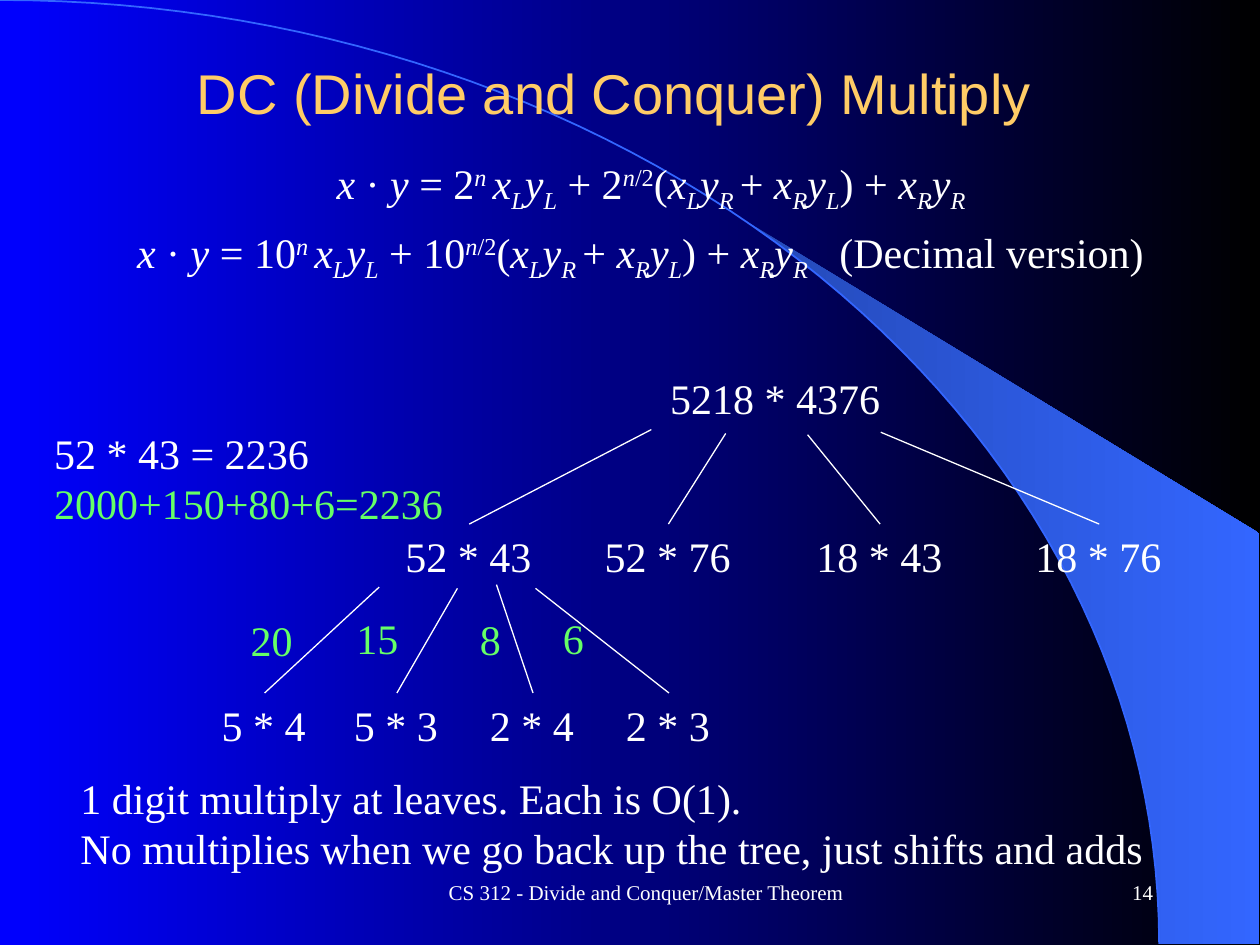
import math

from lxml import etree
from pptx import Presentation
from pptx.dml.color import RGBColor
from pptx.enum import shapes, text
from pptx.oxml import ns
from pptx.util import Pt

WHITE, GREEN, GOLD = "FFFFFF", "66FF66", "FFCC66"
BLUE, DARK_BLUE = "3366FF", "2449B6"
SERIF, SANS = "Times New Roman", "Arial"
LEFT, CENTER, RIGHT = text.PP_ALIGN.LEFT, text.PP_ALIGN.CENTER, text.PP_ALIGN.RIGHT
TOP, MIDDLE = text.MSO_ANCHOR.TOP, text.MSO_ANCHOR.MIDDLE
NODE_HEIGHT = 36


def color(value):
    return RGBColor.from_string(value)


def style_run(run, size, fill, font=SERIF):
    run.font.name = font
    run.font.size = Pt(size)
    run.font.color.rgb = color(fill)


def set_gradient(fill, start, end):
    fill.gradient()
    fill.gradient_angle = 0
    for stop, value in zip(fill.gradient_stops, (start, end)):
        stop.color.rgb = color(value)


def add_text(slide, box, lines, colors=(WHITE,), size=24, align=LEFT,
             anchor=TOP, wrap=False):
    shape = slide.shapes.add_textbox(*map(Pt, box))
    frame = shape.text_frame
    frame.text = "\n".join(lines)
    frame.word_wrap = wrap
    frame.vertical_anchor = anchor
    for paragraph, fill in zip(frame.paragraphs, colors):
        paragraph.alignment = align
        for run in paragraph.runs:
            style_run(run, size, fill)
    return shape


def add_title(slide, box, wording):
    title = slide.shapes.title
    title.left, title.top, title.width, title.height = map(Pt, box)
    frame = title.text_frame
    frame.text = wording
    frame.auto_size = text.MSO_AUTO_SIZE.NONE
    frame.vertical_anchor = TOP
    paragraph = frame.paragraphs[0]
    paragraph.alignment = CENTER
    style_run(paragraph.runs[0], 32, GOLD, SANS)
    # Bring the title in front of the backdrop
    slide.shapes.element.append(title.element)


def add_outline(slide, points, close):
    points = [(Pt(x), Pt(y)) for x, y in points]
    builder = slide.shapes.build_freeform(*points[0], scale=1.0)
    builder.add_line_segments(points[1:], close=close)
    shape = builder.convert_to_shape()
    shape.shadow.inherit = False
    return shape


def add_backdrop(slide, box):
    """Quarter ellipse across the box, with a beam between it and the right edge."""
    left, top, width, height = box

    def arc(start, steps=60):
        angles = [start + (math.pi / 2 - start) * i / steps for i in range(steps + 1)]
        return [(left + width * math.sin(a), top + height * (1 - math.cos(a)))
                for a in angles]

    edge = 719.3
    beam_start = math.asin(0.64)
    beam = add_outline(slide, [(edge, 304.6), *arc(beam_start), (edge, top + height)], True)
    set_gradient(beam.fill, DARK_BLUE, BLUE)
    beam.line.fill.background()

    curve = add_outline(slide, arc(0), False)
    curve.fill.background()
    curve.line.color.rgb = color(BLUE)
    curve.line.width = Pt(1)


def add_formula(slide, box, base, remark=""):
    """Product of two split numbers; each part is (text, italic, baseline)."""
    def term(first, second, gap=""):
        return [("x", True, 0), (first, True, -25), ("y", True, 0), (second + gap, True, -25)]

    parts = [("x ", True, 0), ("·", False, 0), (" y ", True, 0),
             (f"= {base}", False, 0), ("n ", True, 30), *term("L", "L"),
             (f" + {base}", False, 0), ("n", True, 30), ("/2", False, 30),
             ("(", False, 0), *term("L", "R", " "), ("+ ", False, 0), *term("R", "L"),
             (") + ", False, 0), *term("R", "R")]
    if remark:
        parts.append((remark, False, 0))

    frame = slide.shapes.add_textbox(*map(Pt, box)).text_frame
    frame.word_wrap = True
    paragraph = frame.paragraphs[0]
    paragraph.alignment = CENTER
    paragraph.line_spacing = 0.8
    for wording, italic, baseline in parts:
        run = paragraph.add_run()
        run.text = wording
        style_run(run, 24, WHITE)
        run.font.italic = italic
        if baseline:
            run.font._element.set("baseline", str(baseline * 1000))


def add_branch(slide, start, node):
    """Line from a point below the parent to the top of a child node."""
    x, y = map(Pt, start)
    line = slide.shapes.add_connector(shapes.MSO_CONNECTOR.STRAIGHT, x, y, x, y)
    line.end_connect(node, 0)
    line.line.color.rgb = color(WHITE)
    line.line.width = Pt(0.75)
    etree.SubElement(line.element.spPr, ns.qn("a:effectLst"))


def add_tree_level(slide, top, width, children):
    for label, left, start in children:
        node = add_text(slide, (left, top, width, NODE_HEIGHT), [label])
        add_branch(slide, start, node)


def add_tree(slide):
    # Root
    add_text(slide, (375.8, 209.5, 135.4, NODE_HEIGHT), ["5218 * 4376"])
    # Two-digit products
    add_tree_level(slide, 299.5, 87.1, [
        ("52 * 43", 224.6, (372.2, 245.5)),
        ("52 * 76", 338.4, (414.7, 247.7)),
        ("18 * 43", 459.4, (461.5, 248.4)),
        ("18 * 76", 584.6, (503.3, 247)),
    ])
    # One-digit products
    add_tree_level(slide, 396, 63.4, [
        ("5 * 4", 119.5, (216.7, 335.5)),
        ("5 * 3", 195.1, (261.4, 336.2)),
        ("2 * 4", 272.9, (283.7, 334.1)),
        ("2 * 3", 350.6, (306, 336.2)),
    ])
    # Leaf results
    for label, left, top, width in [("20", 136.1, 347.8, 38.9), ("15", 196.6, 346.3, 38.9),
                                    ("8", 267.1, 347, 26.6), ("6", 314.6, 346.3, 26.6)]:
        add_text(slide, (left, top, width, NODE_HEIGHT), [label], [GREEN])


def add_footer(slide, top, height):
    add_text(slide, (228.2, top, 282.2, height), ["CS 312 - Divide and Conquer/Master Theorem"],
             size=12, align=CENTER, anchor=MIDDLE, wrap=True)
    add_text(slide, (516.2, top, 149.8, height), ["14"],
             size=12, align=RIGHT, anchor=MIDDLE, wrap=True)


def main():
    presentation = Presentation()
    presentation.slide_width, presentation.slide_height = Pt(720), Pt(540)
    slide = presentation.slides.add_slide(presentation.slide_layouts[5])
    set_gradient(slide.background.fill, "0000FF", "000000")

    add_backdrop(slide, (0, 0, 662.4, 539.3))
    add_title(slide, (45, 30, 612, 66), "DC (Divide and Conquer) Multiply")
    add_formula(slide, (150, 89.3, 444, 30.2), 2)
    add_formula(slide, (48, 128.9, 636, 30.2), 10, "   (Decimal version)")
    add_tree(slide)
    # Worked result and conclusion
    add_text(slide, (23.8, 240.5, 239, 65.5),
             ["52 * 43 = 2236", "2000+150+80+6=2236"], [WHITE, GREEN])
    add_text(slide, (38.9, 437.8, 627.1, 65.5),
             ["1 digit multiply at leaves. Each is O(1).",
              "No multiplies when we go back up the tree, just shifts and adds"], [WHITE, WHITE])
    add_footer(slide, 492, 36)
    presentation.save("out.pptx")


if __name__ == "__main__":
    main()
